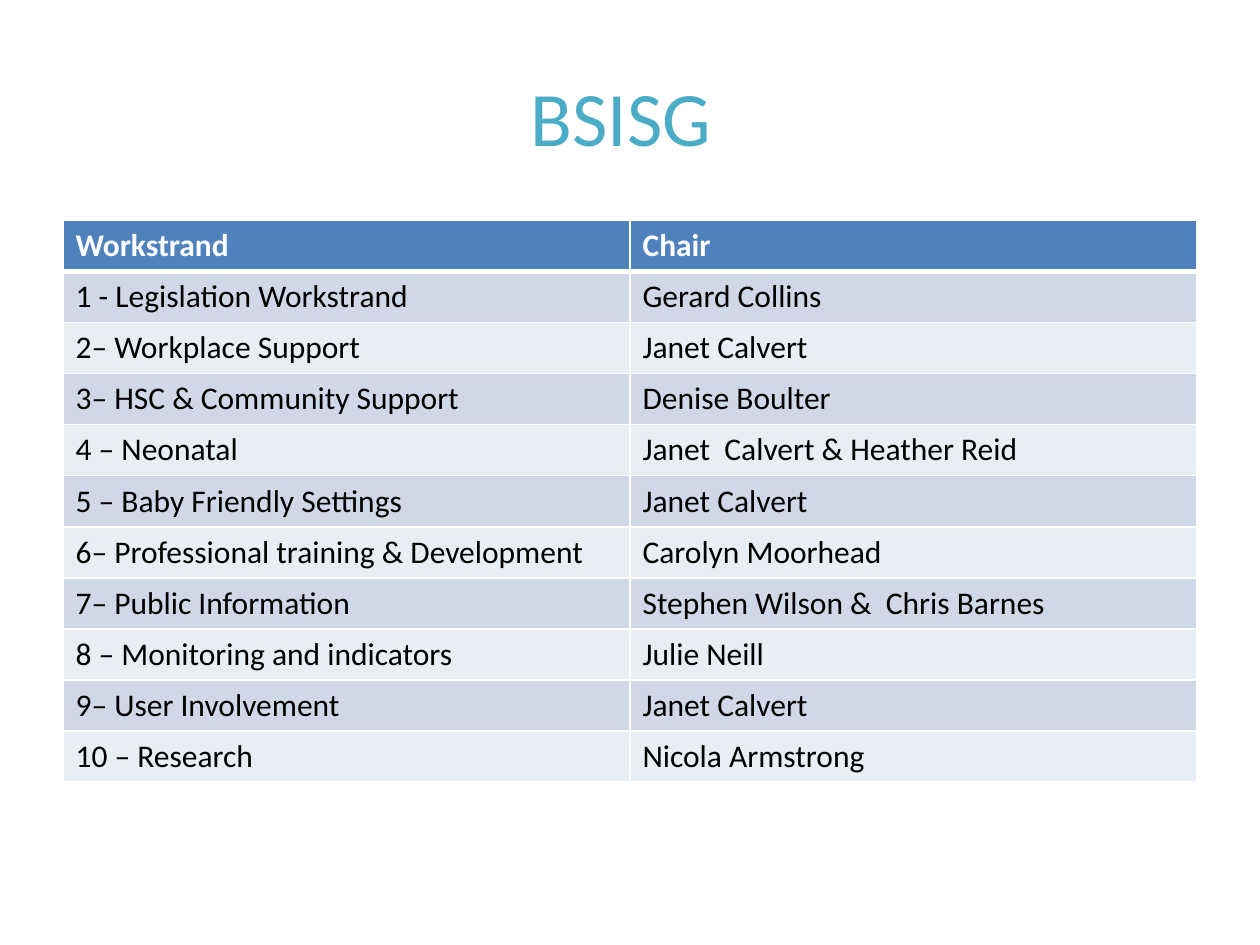
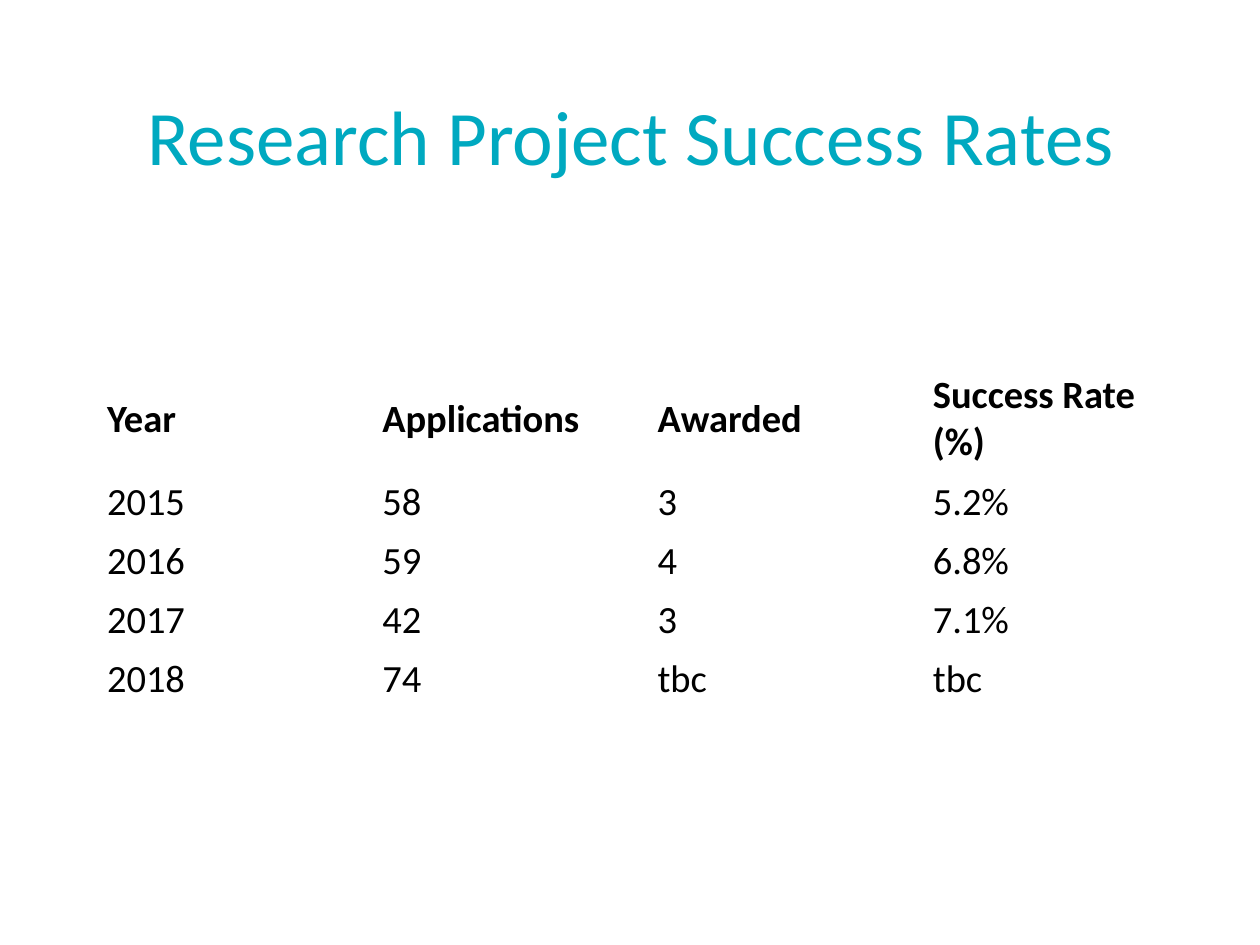
from dataclasses import dataclass

from lxml import etree
from pptx import Presentation
from pptx.dml.color import RGBColor
from pptx.enum.text import MSO_ANCHOR, PP_ALIGN
from pptx.oxml.ns import qn
from pptx.util import Inches, Pt

CENTER, LEFT = PP_ALIGN.CENTER, PP_ALIGN.LEFT
TOP, MIDDLE = MSO_ANCHOR.TOP, MSO_ANCHOR.MIDDLE
BLANK_LAYOUT = 6

# Content
WORKSTRANDS_TITLE = "BSISG"
WORKSTRANDS = [
    ("Workstrand", "Chair"),
    ("1 - Legislation Workstrand", "Gerard Collins"),
    ("2– Workplace Support", "Janet Calvert"),
    ("3– HSC & Community Support", "Denise Boulter"),
    ("4 – Neonatal", "Janet  Calvert & Heather Reid"),
    ("5 – Baby Friendly Settings", "Janet Calvert"),
    ("6– Professional training & Development", "Carolyn Moorhead"),
    ("7– Public Information", "Stephen Wilson &  Chris Barnes"),
    ("8 – Monitoring and indicators", "Julie Neill"),
    ("9– User Involvement", "Janet Calvert"),
    ("10 – Research", "Nicola Armstrong"),
]

RATES_TITLE = "Research Project Success Rates"
RATES = [
    ("Year", "Applications", "Awarded", "Success Rate (%)"),
    ("2015", "58", "3", "5.2%"),
    ("2016", "59", "4", "6.8%"),
    ("2017", "42", "3", "7.1%"),
    ("2018", "74", "tbc", "tbc"),
]


@dataclass(frozen=True)
class Theme:
    font: str = "Calibri"
    title_size: int = 44
    workstrand_size: int = 18
    rate_size: int = 22
    aqua: str = "4BACC6"
    teal: str = "00A9C0"
    header: str = "4F81BD"
    bands: tuple = ("D0D8E8", "E9EDF4")
    white: str = "FFFFFF"
    black: str = "000000"


THEME = Theme()


def write(frame, text, *, size, color=THEME.black, bold=False, align=LEFT):
    """Put one formatted paragraph into a text frame."""
    paragraph = frame.paragraphs[0]
    paragraph.alignment = align
    run = paragraph.add_run()
    run.text = text
    run.font.name = THEME.font
    run.font.size = Pt(size)
    run.font.bold = bold
    run.font.color.rgb = RGBColor.from_string(color)


def add_titled_slide(deck, title, left, top, color):
    slide = deck.slides.add_slide(deck.slide_layouts[BLANK_LAYOUT])
    frame = slide.shapes.add_textbox(
        Inches(left), Inches(top), Inches(9), Inches(1.25)).text_frame
    frame.word_wrap = True
    frame.vertical_anchor = MIDDLE
    write(frame, title, size=THEME.title_size, color=color, align=CENTER)
    return slide


def add_plain_table(slide, left, top, width, row_heights, column_count):
    """Add an unstyled table with equal columns."""
    table = slide.shapes.add_table(
        len(row_heights), column_count, Inches(left), Inches(top),
        Inches(width), Inches(sum(row_heights))).table
    table.first_row = table.horz_banding = False
    for row, height in zip(table.rows, row_heights):
        row.height = Inches(height)
    for cell in table.iter_cells():
        cell.fill.background()
    return table


def set_borders(cell, color, bottom=1):
    """Draw all four cell edges; borders must come before the fill."""
    properties = cell._tc.get_or_add_tcPr()
    edges = (("a:lnL", 1), ("a:lnR", 1), ("a:lnT", 1), ("a:lnB", bottom))
    for position, (tag, points) in enumerate(edges):
        line = etree.Element(qn(tag), w=str(Pt(points)))
        fill = etree.SubElement(line, qn("a:solidFill"))
        etree.SubElement(fill, qn("a:srgbClr"), val=color)
        properties.insert(position, line)


def build_workstrands(deck):
    slide = add_titled_slide(deck, WORKSTRANDS_TITLE, 0.43, 0.29, THEME.aqua)
    heights = [4.46 / len(WORKSTRANDS)] * len(WORKSTRANDS)
    table = add_plain_table(slide, 0.5, 1.75, 9, heights, 2)
    for r, record in enumerate(WORKSTRANDS):
        heading = r == 0
        fill = THEME.header if heading else THEME.bands[(r - 1) % 2]
        for c, text in enumerate(record):
            cell = table.cell(r, c)
            cell.vertical_anchor = TOP
            cell.fill.solid()
            cell.fill.fore_color.rgb = RGBColor.from_string(fill)
            set_borders(cell, THEME.white, bottom=3 if heading else 1)
            write(cell.text_frame, text, size=THEME.workstrand_size,
                  color=THEME.white if heading else THEME.black, bold=heading)


def build_rates(deck):
    slide = add_titled_slide(deck, RATES_TITLE, 0.51, 0.44, THEME.teal)
    # A merged empty row sits above the two-line column headings
    heights = [0.48, 0.85] + [0.47] * (len(RATES) - 1)
    columns = len(RATES[0])
    table = add_plain_table(slide, 0.75, 2.42, 8.74, heights, columns)
    table.cell(0, 0).merge(table.cell(0, columns - 1))
    for r, record in enumerate(RATES, start=1):
        for c, text in enumerate(record):
            cell = table.cell(r, c)
            cell.vertical_anchor = MIDDLE
            write(cell.text_frame, text, size=THEME.rate_size, bold=r == 1)


def main():
    deck = Presentation()
    deck.slide_width, deck.slide_height = Inches(10), Inches(7.5)
    build_workstrands(deck)
    build_rates(deck)
    deck.save("out.pptx")


if __name__ == "__main__":
    main()
